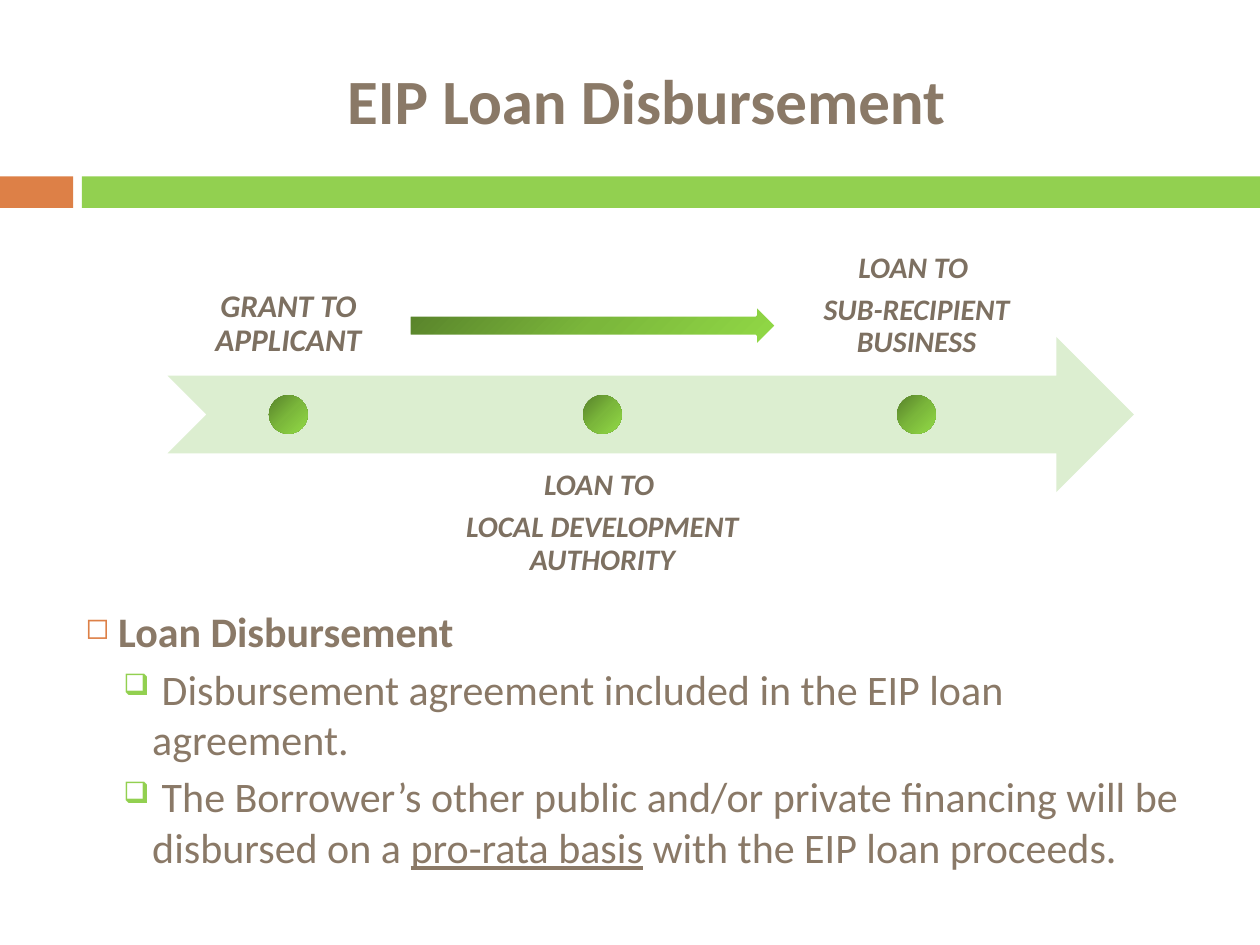
import copy

import pptx
import pptx.dml.color
import pptx.enum.shapes
import pptx.enum.text
import pptx.oxml.ns
import pptx.util
from lxml import etree

RGBColor = pptx.dml.color.RGBColor
SHAPE = pptx.enum.shapes.MSO_SHAPE
ANCHOR = pptx.enum.text.MSO_ANCHOR
ALIGN = pptx.enum.text.PP_ALIGN
Inches = pptx.util.Inches
Pt = pptx.util.Pt
qn = pptx.oxml.ns.qn

FONT = "Calibri"
ORANGE = RGBColor(0xDD, 0x80, 0x47)
GREEN = RGBColor(0x92, 0xD0, 0x50)
PALE_GREEN = RGBColor(0xDC, 0xEE, 0xD0)
BROWN = RGBColor(0x8A, 0x79, 0x67)
LABEL_BROWN = RGBColor(0x7D, 0x70, 0x61)
WHITE = RGBColor(0xFF, 0xFF, 0xFF)
GRADIENT = [
    (0, RGBColor(0x57, 0x81, 0x2A)),
    (0.5, RGBColor(0x7B, 0xB7, 0x3B)),
    (1, RGBColor(0x92, 0xDA, 0x46)),
]

STAGES = [
    (["GRANT TO APPLICANT"], 18, 1.91, 0.14, True),
    (["LOAN TO ", "LOCAL DEVELOPMENT AUTHORITY"], 17, 2.88, 0.13, False),
    (["LOAN TO ", "SUB-RECIPIENT BUSINESS"], 17, 1.91, 0.13, True),
]
BULLETS = [
    (0, [("Loan Disbursement", True, False)]),
    (1, [(" Disbursement agreement included in the EIP loan agreement.", False, False)]),
    (1, [
        (" The Borrower’s other public and/or private financing will be disbursed on a ", False, False),
        ("pro-rata basis", False, True),
        (" with the EIP loan proceeds.", False, False),
    ]),
]
LEVELS = [
    ("◻", ORANGE, 0.26, 0.26, 1.14, 5.2),
    ("❑", GREEN, 0.53, 0.23, 1.0, 4.1),
]


def add_shape(page, kind, box, color=None):
    shape = page.shapes.add_shape(kind, *map(Inches, box))
    shape.shadow.inherit = False
    shape.line.fill.background()
    if color is None:
        shape.fill.gradient()
        stops = shape._element.spPr.find(".//" + qn("a:gsLst"))
        stops.append(copy.deepcopy(stops[0]))
        for stop, (position, shade) in zip(shape.fill.gradient_stops, GRADIENT):
            stop.position = position
            stop.color.rgb = shade
        shape.fill.gradient_angle = 315
    else:
        shape.fill.solid()
        shape.fill.fore_color.rgb = color
    return shape


def add_frame(page, box, anchor, inset_x=0.1, inset_y=0.05):
    frame = page.shapes.add_textbox(*map(Inches, box)).text_frame
    frame.word_wrap = True
    frame.vertical_anchor = anchor
    frame.margin_left = frame.margin_right = Inches(inset_x)
    frame.margin_top = frame.margin_bottom = Inches(inset_y)
    return frame


def next_para(frame, index):
    return frame.paragraphs[0] if index == 0 else frame.add_paragraph()


def add_span(para, text, size, color, bold=False, italic=False, underline=False):
    span = para.add_run()
    span.text = text
    font = span.font
    font.name, font.size, font.color.rgb = FONT, Pt(size), color
    font.bold, font.italic, font.underline = bold, italic, underline


def set_bullet(para, symbol, color, margin, hanging):
    props = para._p.get_or_add_pPr()
    props.set("marL", str(Inches(margin)))
    props.set("indent", str(-Inches(hanging)))
    holder = etree.SubElement(props, qn("a:buClr"))
    etree.SubElement(holder, qn("a:srgbClr"), val=str(color))
    etree.SubElement(props, qn("a:buSzPct"), val="70000")
    etree.SubElement(props, qn("a:buChar"), char=symbol)


def add_title(page, box):
    para = add_frame(page, box, ANCHOR.MIDDLE).paragraphs[0]
    para.alignment = ALIGN.CENTER
    add_span(para, "EIP Loan Disbursement", 36, BROWN, bold=True)


def add_band(page, box):
    left, top, width, height = box
    accent, gap = 0.58, 0.07
    start = accent + gap
    add_shape(page, SHAPE.RECTANGLE, (left, top, accent, height), ORANGE)
    add_shape(page, SHAPE.RECTANGLE, (left + start, top, width - start, height), GREEN)


def add_timeline(page, box):
    left, top, width, height = box
    row = height * 0.4
    middle = top + height / 2
    dot = row / 4
    step = width * 0.325
    add_shape(page, SHAPE.NOTCHED_RIGHT_ARROW, (left, middle - row / 2, width, row), PALE_GREEN)
    for index, (lines, size, label_width, inset, above) in enumerate(STAGES):
        center = left + width / 8 + index * step
        label_top = top if above else top + height - row
        anchor = ANCHOR.BOTTOM if above else ANCHOR.TOP
        label_box = (center - label_width / 2, label_top, label_width, row)
        frame = add_frame(page, label_box, anchor, inset, inset)
        for number, line in enumerate(lines):
            para = next_para(frame, number)
            para.alignment = ALIGN.CENTER
            para.line_spacing = 0.9
            para.space_after = Pt(size * 0.35)
            add_span(para, line, size, LABEL_BROWN, bold=True, italic=True)
        add_shape(page, SHAPE.OVAL, (center - dot / 2, middle - dot / 2, dot, dot))
    link = add_shape(page, SHAPE.RIGHT_ARROW, (left + width / 4, top + 0.67, width * 0.38, 0.33))
    link.line.color.rgb = WHITE
    link.line.width = Pt(1.5)


def add_bullets(page, box):
    frame = add_frame(page, box, ANCHOR.TOP)
    for index, (level, spans) in enumerate(BULLETS):
        symbol, color, margin, hanging, spacing, before = LEVELS[level]
        para = next_para(frame, index)
        para.level = level
        para.line_spacing = spacing
        para.space_before = Pt(before)
        set_bullet(para, symbol, color, margin, hanging)
        for text, bold, underline in spans:
            add_span(para, text, 24, BROWN, bold=bold, underline=underline)


def main():
    deck = pptx.Presentation()
    deck.slide_width, deck.slide_height = Inches(10), Inches(7.5)
    page = deck.slides.add_slide(deck.slide_layouts[6])
    add_band(page, (0, 1.4, 10, 0.25))
    add_title(page, (0.67, 0.25, 8.92, 1.08))
    add_bullets(page, (0.58, 4.7, 8.92, 2.38))
    add_timeline(page, (1.33, 1.75, 7.67, 3.08))
    deck.save("out.pptx")


if __name__ == "__main__":
    main()
